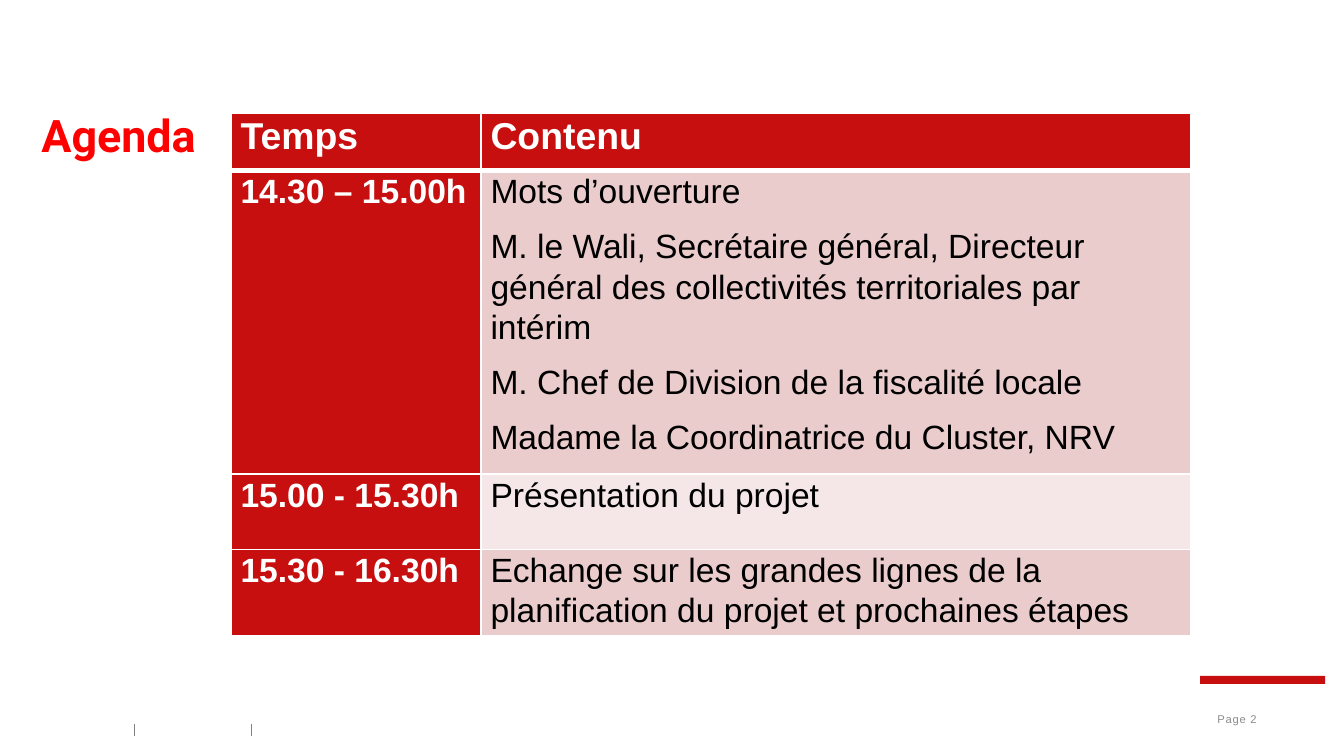
import pptx
import pptx.dml.color
import pptx.enum.shapes
import pptx.enum.text
import pptx.oxml.ns
import pptx.util
import lxml.etree

RGBColor = pptx.dml.color.RGBColor
RED = RGBColor(0xC8, 0x0F, 0x0F)
TITLE_RED = RGBColor(0xFF, 0x00, 0x00)
WHITE = RGBColor(0xFF, 0xFF, 0xFF)
BLACK = RGBColor(0x00, 0x00, 0x00)
TICK_GRAY = RGBColor(0x80, 0x80, 0x80)
PAGE_GRAY = RGBColor(0x8C, 0x8C, 0x8C)
BANDS = [RGBColor(0xEB, 0xCC, 0xCC), RGBColor(0xF5, 0xE7, 0xE7)]

AGENDA = [
    ("14.30 – 15.00h", [
        "Mots d’ouverture",
        "M. le Wali, Secrétaire général, Directeur général des collectivités "
        "territoriales par intérim",
        "M. Chef de Division de la fiscalité locale",
        "Madame la Coordinatrice du Cluster, NRV",
    ]),
    ("15.00 - 15.30h", ["Présentation du projet"]),
    ("15.30 - 16.30h", [
        "Echange sur les grandes lignes de la planification du projet et "
        "prochaines étapes"]),
]


def grid(units):
    """Length of grid columns or rows: ten to the inch, 100 across the slide."""
    return pptx.util.Inches(units / 10)


class AgendaSlide:
    font = "Arial"

    def __init__(self, deck):
        self.slide = deck.slides.add_slide(deck.slide_layouts[6])
        self.shapes = self.slide.shapes

    def add_span(self, para, text, size, color, bold=False, font=None, spacing=0.9, after=0):
        para.line_spacing = spacing
        para.space_after = pptx.util.Pt(after)
        span = para.add_run()
        span.text = text
        span.font.name = font or self.font
        span.font.size = pptx.util.Pt(size)
        span.font.bold = bold
        span.font.color.rgb = color
        return span

    def text(self, left, top, width, height, text, size, color, **style):
        box = self.shapes.add_textbox(*map(grid, (left, top, width, height)))
        frame = box.text_frame
        frame.word_wrap = True
        frame.vertical_anchor = pptx.enum.text.MSO_ANCHOR.MIDDLE
        return self.add_span(frame.paragraphs[0], text, size, color, **style)

    def bar(self, left, top, width, height, color):
        shape = self.shapes.add_shape(pptx.enum.shapes.MSO_SHAPE.RECTANGLE,
                                      *map(grid, (left, top, width, height)))
        shape.shadow.inherit = False
        shape.fill.solid()
        shape.fill.fore_color.rgb = color
        shape.line.fill.background()

    def tick(self, left, top, height, color):
        line = self.shapes.add_connector(pptx.enum.shapes.MSO_CONNECTOR.STRAIGHT,
                                         *map(grid, (left, top, left, top + height)))
        line.line.color.rgb = color
        line.line.width = pptx.util.Pt(0.75)
        lxml.etree.SubElement(line._element.spPr, pptx.oxml.ns.qn("a:effectLst"))

    def borders(self, cell, top, bottom):
        """Draw white cell borders; top and bottom widths are in points."""
        properties = cell._tc.get_or_add_tcPr()
        widths = {"lnL": 1, "lnR": 1, "lnT": top, "lnB": bottom}
        for place, (side, width) in enumerate(widths.items()):
            edge = lxml.etree.Element(pptx.oxml.ns.qn("a:" + side), w=str(pptx.util.Pt(width)))
            fill = lxml.etree.SubElement(edge, pptx.oxml.ns.qn("a:solidFill"))
            lxml.etree.SubElement(fill, pptx.oxml.ns.qn("a:srgbClr"), val=str(WHITE))
            properties.insert(place, edge)

    def cell(self, cell, texts, size, color, fill, bold, top=1, bottom=1):
        cell.fill.solid()
        cell.fill.fore_color.rgb = fill
        cell.margin_left = cell.margin_right = grid(0.7)
        cell.margin_top = cell.margin_bottom = 0
        frame = cell.text_frame
        for index, text in enumerate(texts):
            para = frame.add_paragraph() if index else frame.paragraphs[0]
            self.add_span(para, text, size, color, bold=bold, spacing=1.07, after=8)
        self.borders(cell, top, bottom)

    def table(self, left, top, widths, heights, headings, entries):
        table = self.shapes.add_table(
            len(heights), len(widths), grid(left), grid(top),
            grid(sum(widths)), grid(sum(heights))).table
        for column, width in zip(table.columns, widths):
            column.width = grid(width)
        for row, height in zip(table.rows, heights):
            row.height = grid(height)
        for index, heading in enumerate(headings):
            self.cell(table.cell(0, index), [heading], 20, WHITE, RED, True, bottom=3)
        for index, (time, contents) in enumerate(entries):
            edge = 1 if index else 3
            self.cell(table.cell(index + 1, 0), [time], 18, WHITE, RED, True, top=edge)
            self.cell(table.cell(index + 1, 1), contents, 18, BLACK,
                      BANDS[index % 2], False, top=edge)


def main():
    deck = pptx.Presentation()
    deck.slide_width = grid(100)
    deck.slide_height = grid(56.25)
    page = AgendaSlide(deck)

    # Footer accents
    page.bar(89.3, 50.3, 9.3, 0.6, RED)
    for left in (10, 18.7):
        page.tick(left, 53.9, 0.9, TICK_GRAY)

    # Title and page number
    page.text(2.1, 5.8, 23.3, 9, "Agenda", 24, TITLE_RED, bold=True, font="Roboto")
    number = page.text(89.6, 52.1, 5.1, 3, "Page 2", 6, PAGE_GRAY, after=6)
    number._r.get_or_add_rPr().set("spc", "40")

    # Agenda table
    page.table(17.2, 8.4, [18.6, 52.8], [4.3, 21.3, 5.6, 6.2],
               ["Temps", "Contenu"], AGENDA)

    deck.save("out.pptx")


if __name__ == "__main__":
    main()
